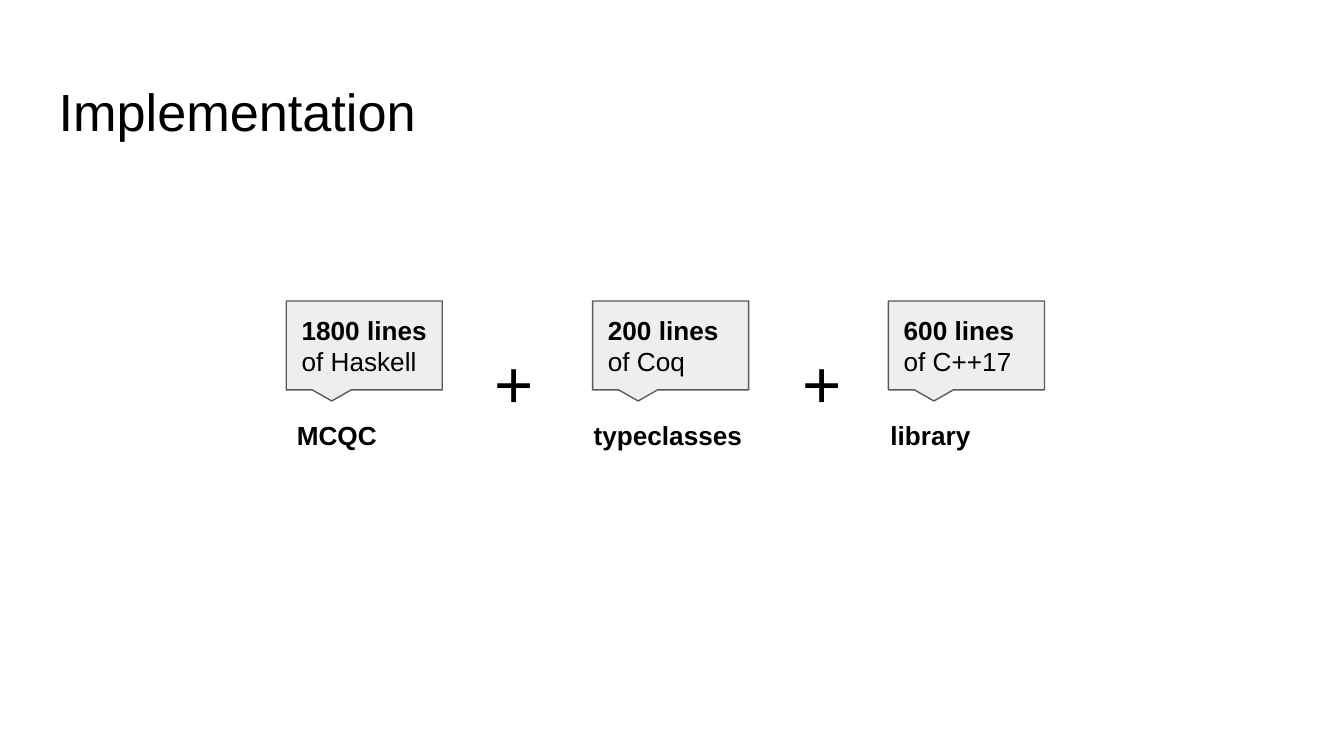
from dataclasses import dataclass

from pptx import Presentation
from pptx.dml.color import RGBColor as Rgb
from pptx.enum.shapes import MSO_SHAPE as Shape
from pptx.enum.text import MSO_ANCHOR as Anchor, PP_ALIGN as Align
from pptx.util import Cm, Pt


@dataclass(frozen=True)
class Theme:
    font: str = "Arial"
    ink: Rgb = Rgb(0x00, 0x00, 0x00)
    fill: Rgb = Rgb(0xEE, 0xEE, 0xEE)
    edge: Rgb = Rgb(0x59, 0x59, 0x59)
    paper: Rgb = Rgb(0xFF, 0xFF, 0xFF)
    title: int = 28
    body: int = 14
    sign: int = 36


THEME = Theme()


def write(shape, lines, size=THEME.body, bold=(False,), pad=0.25):
    """Fill a shape with one paragraph per line; bold has a flag per line."""
    frame = shape.text_frame
    frame.word_wrap = True
    frame.vertical_anchor = Anchor.TOP
    frame.margin_left = frame.margin_right = Cm(pad)
    frame.margin_top = frame.margin_bottom = Cm(pad)
    for i, (line, heavy) in enumerate(zip(lines, bold)):
        para = frame.paragraphs[0] if i == 0 else frame.add_paragraph()
        para.alignment = Align.LEFT
        run = para.add_run()
        run.text = line
        font = run.font
        font.name, font.size, font.bold = THEME.font, Pt(size), heavy
        font.color.rgb = THEME.ink


def add_text(parent, box, lines, **style):
    shape = parent.shapes.add_textbox(*map(Cm, box))
    write(shape, lines, **style)


def add_title(slide, box, text):
    title = slide.shapes.title
    title.left, title.top, title.width, title.height = map(Cm, box)
    write(title, [text], size=THEME.title)


def add_bubble(slide, box, count, lang):
    """Callout grouped with its two lines of text."""
    left, top, width, _ = box
    group = slide.shapes.add_group_shape()
    bubble = group.shapes.add_shape(Shape.RECTANGULAR_CALLOUT, *map(Cm, box))
    bubble.adjustments[0] = -0.208
    bubble.adjustments[1] = 0.625
    bubble.shadow.inherit = False
    bubble.fill.solid()
    bubble.fill.fore_color.rgb = THEME.fill
    bubble.line.color.rgb = THEME.edge
    bubble.line.width = Pt(0.75)
    add_text(group, (left + 0.04, top, width + 0.25, 1.35),
             [count, lang], bold=(True, False))


def add_sum(slide, box):
    """Row of parts, each a bubble over a label, with plus signs between."""
    left, top, _, _ = box
    parts = [  # bubble offset, label width, count, language, label
        (0.05, 2.84, "1800 lines", "of Haskell", "MCQC"),
        (5.84, 3.45, "200 lines", "of Coq", "typeclasses"),
        (11.43, 2.84, "600 lines", "of C++17", "library"),
    ]
    step = 5.61
    for i, (shift, wide, count, lang, label) in enumerate(parts):
        add_bubble(slide, (left + shift, top, 2.95, 1.68), count, lang)
        add_text(slide, (left + i * step, top + 1.98, wide, 0.94),
                 [label], bold=(True,))
    for i in range(len(parts) - 1):
        add_text(slide, (left + 3.73 + i * 5.82, top + 0.51, 1.42, 1.45),
                 ["+"], size=THEME.sign)


def main():
    deck = Presentation()
    deck.slide_width, deck.slide_height = Cm(25.4), Cm(14.29)
    slide = deck.slides.add_slide(deck.slide_layouts[5])
    slide.background.fill.solid()
    slide.background.fill.fore_color.rgb = THEME.paper
    add_title(slide, (0.86, 1.24, 23.67, 1.6), "Implementation")
    add_sum(slide, (5.36, 5.69, 14.38, 2.92))
    deck.save("out.pptx")


if __name__ == "__main__":
    main()
